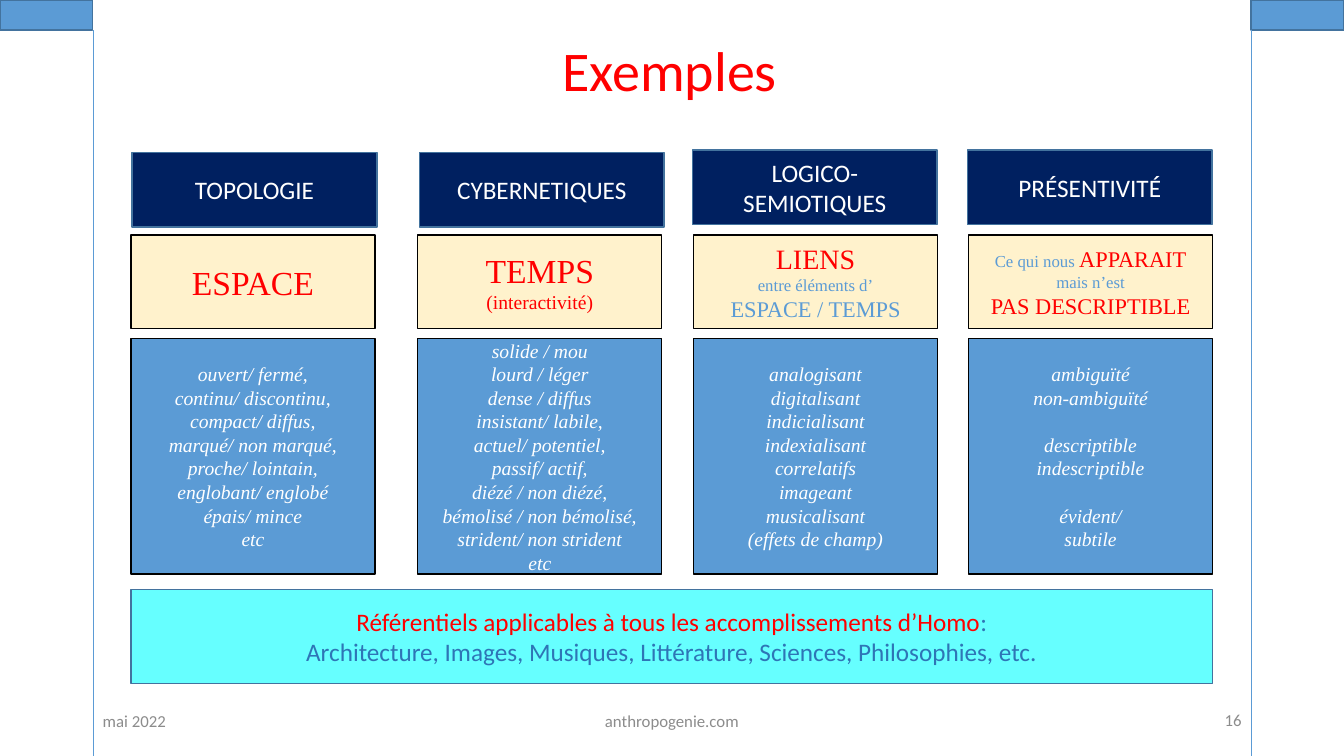
from lxml import etree
from pptx import Presentation
from pptx.dml.color import RGBColor
from pptx.enum import shapes, text
from pptx.oxml.ns import qn
from pptx.util import Cm, Pt

SANS, SERIF = "Calibri", "Times New Roman"
RED, BLUE, NAVY, WHITE = "FF0000", "5B9BD5", "002060", "FFFFFF"
CREAM, CYAN, GREY, BLACK = "FFF2CC", "66FFFF", "8C8C8C", "000000"
EDGE, DEEP_BLUE = "43739E", "2E75B6"
LEFT, CENTER, RIGHT = text.PP_ALIGN.LEFT, text.PP_ALIGN.CENTER, text.PP_ALIGN.RIGHT
LIST_PITCH = 16.8
COLUMN_WIDTH = 6.15

# Left edge, header (left, top, wording), theme paragraphs, groups of examples
COLUMNS = [
    (3.3, (3.33, 3.84, "TOPOLOGIE"),
     [[("ESPACE", 24, RED)]],
     [["ouvert/ fermé,", "continu/ discontinu,", "compact/ diffus,",
       "marqué/ non marqué,", "proche/ lointain,", "englobant/ englobé",
       "épais/ mince", "etc"]]),
    (10.53, (10.57, 3.84, "CYBERNETIQUES"),
     [[("TEMPS", 24, RED)], [("(interactivité)", 14, RED)]],
     [["solide / mou", "lourd / léger", "dense / diffus", "insistant/ labile,",
       "actuel/ potentiel,", "passif/ actif,", "diézé / non diézé,",
       "bémolisé / non bémolisé,", "strident/ non strident", "etc"]]),
    (17.48, (17.45, 3.78, "LOGICO-SEMIOTIQUES"),
     [[("LIENS", 20, RED)], [("entre éléments d’", 12, BLUE)],
      [("ESPACE / TEMPS", 16, BLUE)]],
     [["analogisant", "digitalisant", "indicialisant", "indexialisant",
       "correlatifs", "imageant", "musicalisant", "(effets de champ)"]]),
    (24.41, (24.38, 3.78, "PRÉSENTIVITÉ"),
     [[("Ce qui nous ", 12, BLUE), ("APPARAIT", 16, RED)],
      [("mais n’est", 12, BLUE)], [("PAS DESCRIPTIBLE", 16, RED)]],
     [["ambiguïté", "non-ambiguïté"], ["descriptible", "indescriptible"],
      ["évident/", "subtile"]]),
]


def rgb(value):
    return RGBColor.from_string(value)


def write(frame, paragraphs, font=SANS, italic=False, align=CENTER, wrap=True,
          pitch=None, gaps=()):
    """Fill frame with lists of (wording, size, colour); gaps holds the
    indexes of paragraphs that follow one line of free space."""
    frame.word_wrap = wrap
    frame.vertical_anchor = text.MSO_ANCHOR.MIDDLE
    for index, runs in enumerate(paragraphs):
        paragraph = frame.paragraphs[0] if index == 0 else frame.add_paragraph()
        paragraph.alignment = align
        if pitch:
            paragraph.line_spacing = Pt(pitch)
        if index in gaps:
            paragraph.space_before = Pt(pitch)
        for wording, size, colour in runs:
            run = paragraph.add_run()
            run.text = wording
            run.font.name = font
            run.font.size = Pt(size)
            run.font.italic = italic
            run.font.color.rgb = rgb(colour)


def add_box(slide, left, top, width, height, fill, edge=EDGE):
    box = slide.shapes.add_shape(shapes.MSO_SHAPE.RECTANGLE,
                                 Cm(left), Cm(top), Cm(width), Cm(height))
    box.shadow.inherit = False
    box.fill.solid()
    box.fill.fore_color.rgb = rgb(fill)
    box.line.color.rgb = rgb(edge)
    box.line.width = Pt(1)
    return box.text_frame


def add_label(slide, left, top, width, height, wording, size, colour, **fmt):
    label = slide.shapes.add_textbox(Cm(left), Cm(top), Cm(width), Cm(height))
    write(label.text_frame, [[(wording, size, colour)]], **fmt)


def add_margin_line(slide, x, top, bottom):
    line = slide.shapes.add_connector(shapes.MSO_CONNECTOR.STRAIGHT,
                                      Cm(x), Cm(top), Cm(x), Cm(bottom))
    line.line.color.rgb = rgb(BLUE)
    line.line.width = Pt(0.5)
    etree.SubElement(line._element.spPr, qn("a:effectLst"))


def add_column(slide, left, header, theme, groups):
    header_left, header_top, heading = header
    write(add_box(slide, left, 5.92, COLUMN_WIDTH, 2.36, CREAM, BLACK),
          theme, font=SERIF, wrap=False)

    examples = [[(example, 14, WHITE)] for group in groups for example in group]
    gaps, count = [], 0
    for group in groups[:-1]:
        count += len(group)
        gaps.append(count)
    write(add_box(slide, left, 8.53, COLUMN_WIDTH, 5.94, BLUE, BLACK),
          examples, font=SERIF, italic=True, wrap=False, pitch=LIST_PITCH,
          gaps=gaps)

    write(add_box(slide, header_left, header_top, 6.17, 1.88, NAVY),
          [[(heading, 18, WHITE)]])


def main():
    deck = Presentation()
    deck.slide_width, deck.slide_height = Cm(33.87), Cm(19.05)
    slide = deck.slides.add_slide(deck.slide_layouts[6])

    add_label(slide, 2.34, 17.65, 7.62, 1.01, "mai 2022", 12, GREY, align=LEFT)
    add_label(slide, 11.22, 17.65, 11.43, 1.01, "anthropogenie.com", 12, GREY)
    add_label(slide, 23.92, 17.63, 7.62, 1.01, "16", 12, GREY, align=RIGHT)
    add_label(slide, 13.89, 0.76, 5.97, 1.96, "Exemples", 40, RED, wrap=False)

    for column in COLUMNS:
        add_column(slide, *column)

    write(add_box(slide, 3.3, 14.85, 27.26, 2.37, CYAN), [
        [("Référentiels applicables à tous les accomplissements d’Homo", 18, RED),
         (":", 18, DEEP_BLUE)],
        [("Architecture, Images, Musiques, Littérature, Sciences, "
          "Philosophies, etc.", 18, DEEP_BLUE)],
    ])

    for corner_left, margin in [(0, 2.36), (31.53, 31.53)]:
        add_box(slide, corner_left, 0, 2.34, 0.76, BLUE)
        add_margin_line(slide, margin, 0.76, 19.05)

    deck.save("out.pptx")


if __name__ == "__main__":
    main()
